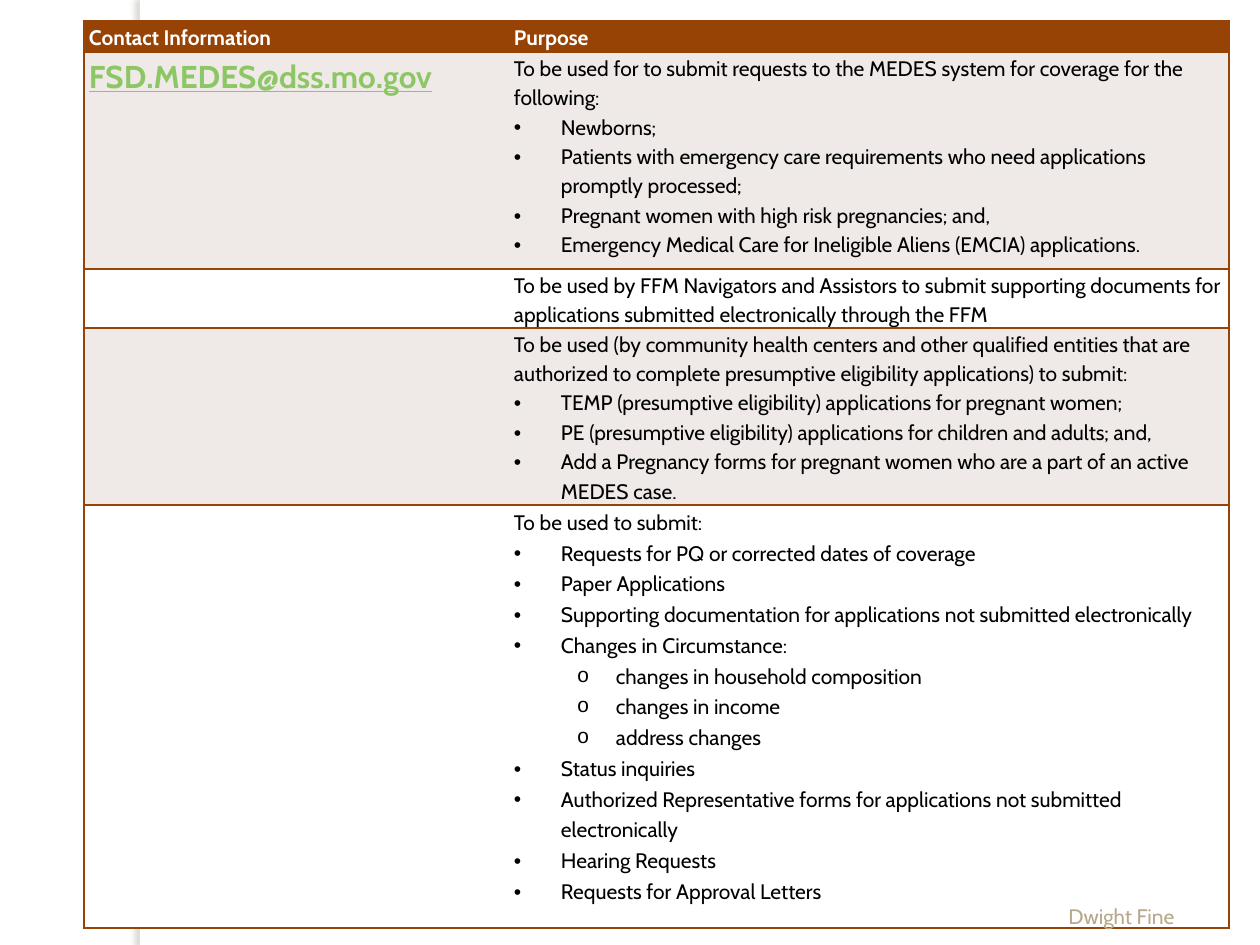
from typing import NamedTuple

from lxml.etree import SubElement
from pptx import Presentation
from pptx.dml.color import RGBColor
from pptx.enum.shapes import MSO_SHAPE as Preset
from pptx.enum.text import MSO_ANCHOR as Anchor, PP_ALIGN as Align
from pptx.oxml.ns import qn
from pptx.util import Pt

PX = 7258  # EMU per px, 126 px to the inch
FONT = "Cabin"
WHITE = RGBColor(0xFF, 0xFF, 0xFF)
BLACK = RGBColor(0, 0, 0)
BROWN = RGBColor(0x96, 0x43, 0x05)
BLUSH = RGBColor(0xEF, 0xE9, 0xE7)
GREEN = RGBColor(0x8D, 0xC7, 0x65)
SAND = RGBColor(0xB6, 0xA9, 0x8A)
SHADOW = RGBColor(0x73, 0x6F, 0x63)


class Bullet(NamedTuple):
    mark: str
    font: str
    margin: int
    hang: int


class Line(NamedTuple):
    text: str
    bullet: Bullet | None = None
    size: int = 12
    color: RGBColor = BLACK
    bold: bool = False
    underline: bool = False


class Row(NamedTuple):
    height: int
    fill: RGBColor
    contact: list[Line]
    purpose: list[Line]
    spacing: float = 1.15


DOT = Bullet("•", "Arial", 47, 47)
RING = Bullet("o", "Courier New", 102, 39)


def dots(*texts: str) -> list[Line]:
    return [Line(text, DOT) for text in texts]


def rings(*texts: str) -> list[Line]:
    return [Line(text, RING) for text in texts]


COLUMNS = [425, 720]
ROWS = [
    Row(31, BROWN,
        [Line("Contact Information", color=WHITE, bold=True)],
        [Line("Purpose", color=WHITE, bold=True)]),
    Row(217, BLUSH,
        [Line("FSD.MEDES@dss.mo.gov", size=18, color=GREEN, bold=True, underline=True)],
        [Line("To be used for to submit requests to the MEDES system for coverage "
              "for the following:"),
         *dots("Newborns;",
               "Patients with emergency care requirements who need applications "
               "promptly processed;",
               "Pregnant women with high risk pregnancies; and,",
               "Emergency Medical Care for Ineligible Aliens (EMCIA) applications.")]),
    Row(59, WHITE, [],
        [Line("To be used by FFM Navigators and Assistors to submit supporting "
              "documents for applications submitted electronically through the FFM")]),
    Row(177, BLUSH, [],
        [Line("To be used (by community health centers and other qualified entities "
              "that are authorized to complete presumptive eligibility applications) "
              "to submit:"),
         *dots("TEMP (presumptive eligibility) applications for pregnant women;",
               "PE (presumptive eligibility) applications for children and adults; and,",
               "Add a Pregnancy forms for pregnant women who are a part of an active "
               "MEDES case.")]),
    Row(423, WHITE, [],
        [Line("To be used to submit:"),
         *dots("Requests for PQ or corrected dates of coverage",
               "Paper Applications",
               "Supporting documentation for applications not submitted electronically",
               "Changes in Circumstance:"),
         *rings("changes in household composition", "changes in income", "address changes"),
         *dots("Status inquiries",
               "Authorized Representative forms for applications not submitted "
               "electronically",
               "Hearing Requests",
               "Requests for Approval Letters")],
        spacing=1.2),
]


def write_line(para, line: Line, spacing: float = 1.0) -> None:
    para.text = line.text
    para.line_spacing = spacing
    font = para.runs[0].font
    font.name, font.size = FONT, Pt(line.size)
    font.bold, font.underline = line.bold, line.underline
    font.color.rgb = line.color
    if line.bullet:
        props = para._p.get_or_add_pPr()
        props.set("marL", str(line.bullet.margin * PX))
        props.set("indent", str(-line.bullet.hang * PX))
        if line.bullet is RING:
            props.set("lvl", "1")
        SubElement(props, qn("a:buFont"), typeface=line.bullet.font)
        SubElement(props, qn("a:buChar"), char=line.bullet.mark)


def set_borders(cell, open_side: str) -> None:
    props = cell._tc.get_or_add_tcPr()
    for side in "LRTB":
        border = SubElement(props, qn(f"a:ln{side}"), w=str(Pt(1)))
        if side == open_side:
            SubElement(border, qn("a:noFill"))
        else:
            fill = SubElement(border, qn("a:solidFill"))
            SubElement(fill, qn("a:srgbClr"), val=str(BROWN))


def fill_cell(cell, lines: list[Line], row: Row, open_side: str) -> None:
    set_borders(cell, open_side)
    cell.fill.solid()
    cell.fill.fore_color.rgb = row.fill
    if not lines:
        return
    cell.margin_left = cell.margin_right = 5 * PX
    cell.margin_top = cell.margin_bottom = 0
    frame = cell.text_frame
    for index, line in enumerate(lines):
        para = frame.add_paragraph() if index else frame.paragraphs[0]
        write_line(para, line, row.spacing)


def add_contact_table(page, left: int, top: int) -> None:
    width, height = sum(COLUMNS), sum(row.height for row in ROWS)
    table = page.shapes.add_table(len(ROWS), len(COLUMNS), left * PX, top * PX,
                                  width * PX, height * PX).table
    table.first_row = table.horz_banding = False
    for column, size in zip(table.columns, COLUMNS):
        column.width = size * PX
    for index, row in enumerate(ROWS):
        table.rows[index].height = row.height * PX
        fill_cell(table.cell(index, 0), row.contact, row, "R")
        fill_cell(table.cell(index, 1), row.purpose, row, "L")


def add_side_strip(page) -> None:
    strip = page.shapes.add_shape(Preset.RECTANGLE, 140 * PX, 0, 10 * PX, 945 * PX)
    strip.fill.solid()
    strip.fill.fore_color.rgb = WHITE
    strip.line.fill.background()
    strip.shadow.inherit = False
    effects = strip._element.spPr.find(qn("a:effectLst"))
    shadow = SubElement(effects, qn("a:outerShdw"), blurRad=str(Pt(3)), dist=str(Pt(3)),
                        dir="10800000", algn="tl", rotWithShape="0")
    color = SubElement(shadow, qn("a:srgbClr"), val=str(SHADOW))
    SubElement(color, qn("a:alpha"), val="25000")


def add_footer(page) -> None:
    box = page.shapes.add_textbox(788 * PX, 869 * PX, 399 * PX, 66 * PX)
    frame = box.text_frame
    frame.word_wrap = True
    frame.vertical_anchor = Anchor.BOTTOM
    para = frame.paragraphs[0]
    write_line(para, Line("Dwight Fine", color=SAND))
    para.alignment = Align.RIGHT


def main() -> None:
    deck = Presentation()
    deck.slide_width, deck.slide_height = 1260 * PX, 945 * PX
    page = deck.slides.add_slide(deck.slide_layouts[6])
    add_side_strip(page)
    add_contact_table(page, 84, 21)
    add_footer(page)
    deck.save("out.pptx")


if __name__ == "__main__":
    main()
